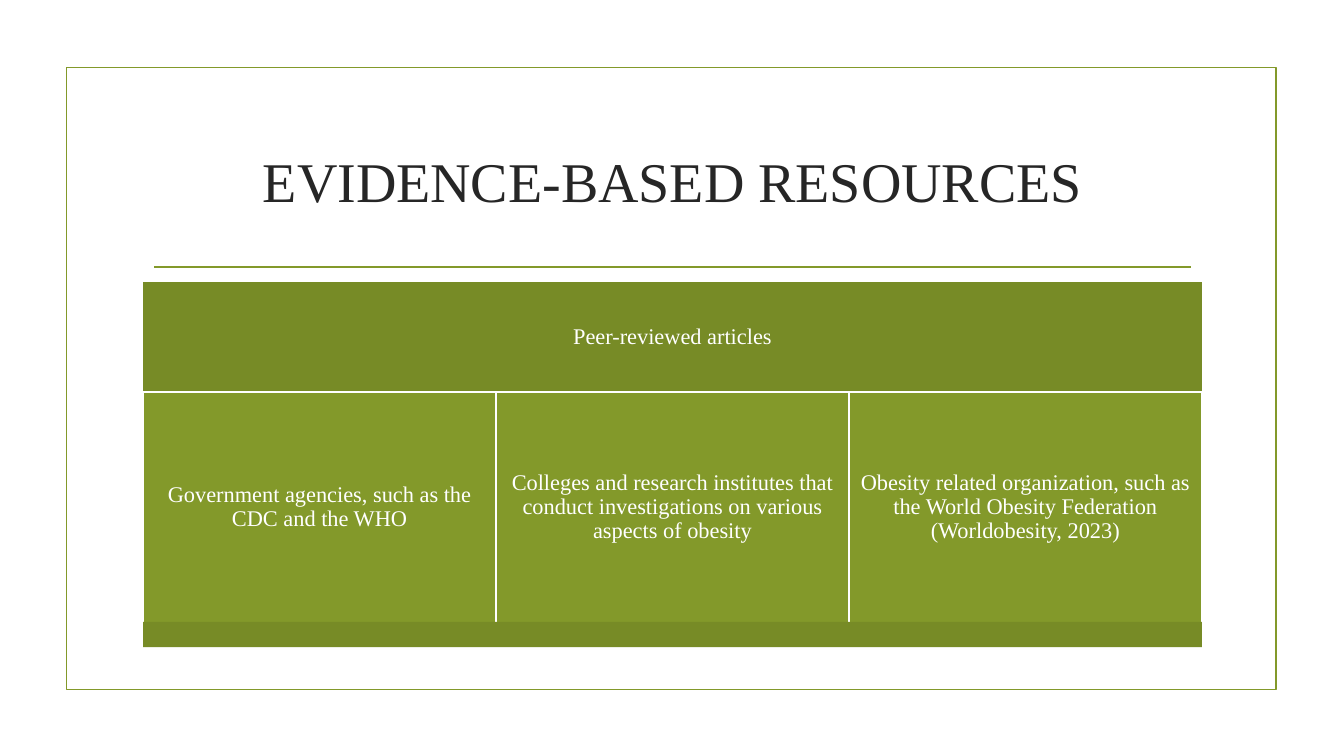
from dataclasses import dataclass

from lxml import etree
from pptx import Presentation
from pptx.dml.color import RGBColor
from pptx.enum.shapes import MSO_CONNECTOR as Connector, MSO_SHAPE as Shape
from pptx.enum.text import MSO_ANCHOR as Anchor, PP_ALIGN as Align
from pptx.oxml.ns import qn
from pptx.util import Inches, Pt


@dataclass(frozen=True)
class Theme:
    font: str = "Times New Roman"
    ink: str = "262626"
    white: str = "FFFFFF"
    olive: str = "83992A"
    dark_olive: str = "778B26"
    title_size: float = 40
    body_size: float = 16
    line_width: float = 1.25


class SlideBuilder:
    def __init__(self, page, theme):
        self.page = page
        self.theme = theme

    def stroke(self, line, color):
        line.color.rgb = RGBColor.from_string(color)
        line.width = Pt(self.theme.line_width)

    def add_text(self, frame, text, size, color, spacing):
        frame.word_wrap = True
        frame.vertical_anchor = Anchor.MIDDLE
        para = frame.paragraphs[0]
        para.alignment = Align.CENTER
        para.line_spacing = spacing
        span = para.add_run()
        span.text = text
        span.font.name = self.theme.font
        span.font.size = Pt(size)
        span.font.color.rgb = RGBColor.from_string(color)

    def title(self, text, left, top, width, height):
        box = self.page.shapes.title
        box.left, box.top = Inches(left), Inches(top)
        box.width, box.height = Inches(width), Inches(height)
        self.add_text(box.text_frame, text, self.theme.title_size, self.theme.ink, 1.0)

    def panel(self, left, top, width, height, fill=None, line=None, text=None):
        box = self.page.shapes.add_shape(
            Shape.RECTANGLE, Inches(left), Inches(top), Inches(width), Inches(height))
        box.shadow.inherit = False
        if fill:
            box.fill.solid()
            box.fill.fore_color.rgb = RGBColor.from_string(fill)
        else:
            box.fill.background()
        if line:
            self.stroke(box.line, line)
        else:
            box.line.fill.background()
        if text:
            frame = box.text_frame
            frame.margin_left = frame.margin_right = Inches(0.07)
            frame.margin_top = frame.margin_bottom = Inches(0.07)
            self.add_text(frame, text, self.theme.body_size, self.theme.white, 0.9)

    def rule(self, left, right, top):
        line = self.page.shapes.add_connector(
            Connector.STRAIGHT, Inches(left), Inches(top), Inches(right), Inches(top))
        self.stroke(line.line, self.theme.olive)
        properties = line._element.find(qn("p:spPr"))
        etree.SubElement(properties, qn("a:effectLst"))


def main():
    deck = Presentation()
    deck.slide_width, deck.slide_height = Inches(13.33), Inches(7.5)
    page = deck.slides.add_slide(deck.slide_layouts[5])
    theme = Theme()
    slide = SlideBuilder(page, theme)
    left, width = 1.42, 10.5

    slide.panel(0.66, 0.67, 12, 6.17, line=theme.olive)
    slide.rule(1.53, 11.81, 2.65)
    slide.title("EVIDENCE-BASED RESOURCES", left, 1.07, width, 1.43)

    slide.panel(left, 2.8, width, 1.09, theme.dark_olive, text="Peer-reviewed articles")
    sources = [
        "Government agencies, such as the CDC and the WHO",
        "Colleges and research institutes that conduct investigations "
        "on various aspects of obesity",
        "Obesity related organization, such as the World Obesity Federation "
        "(Worldobesity, 2023)",
    ]
    column = width / len(sources)
    for index, source in enumerate(sources):
        slide.panel(left + index * column, 3.89, column, 2.29,
                    theme.olive, theme.white, source)
    slide.panel(left, 6.17, width, 0.25, theme.dark_olive)

    deck.save("out.pptx")


if __name__ == "__main__":
    main()
